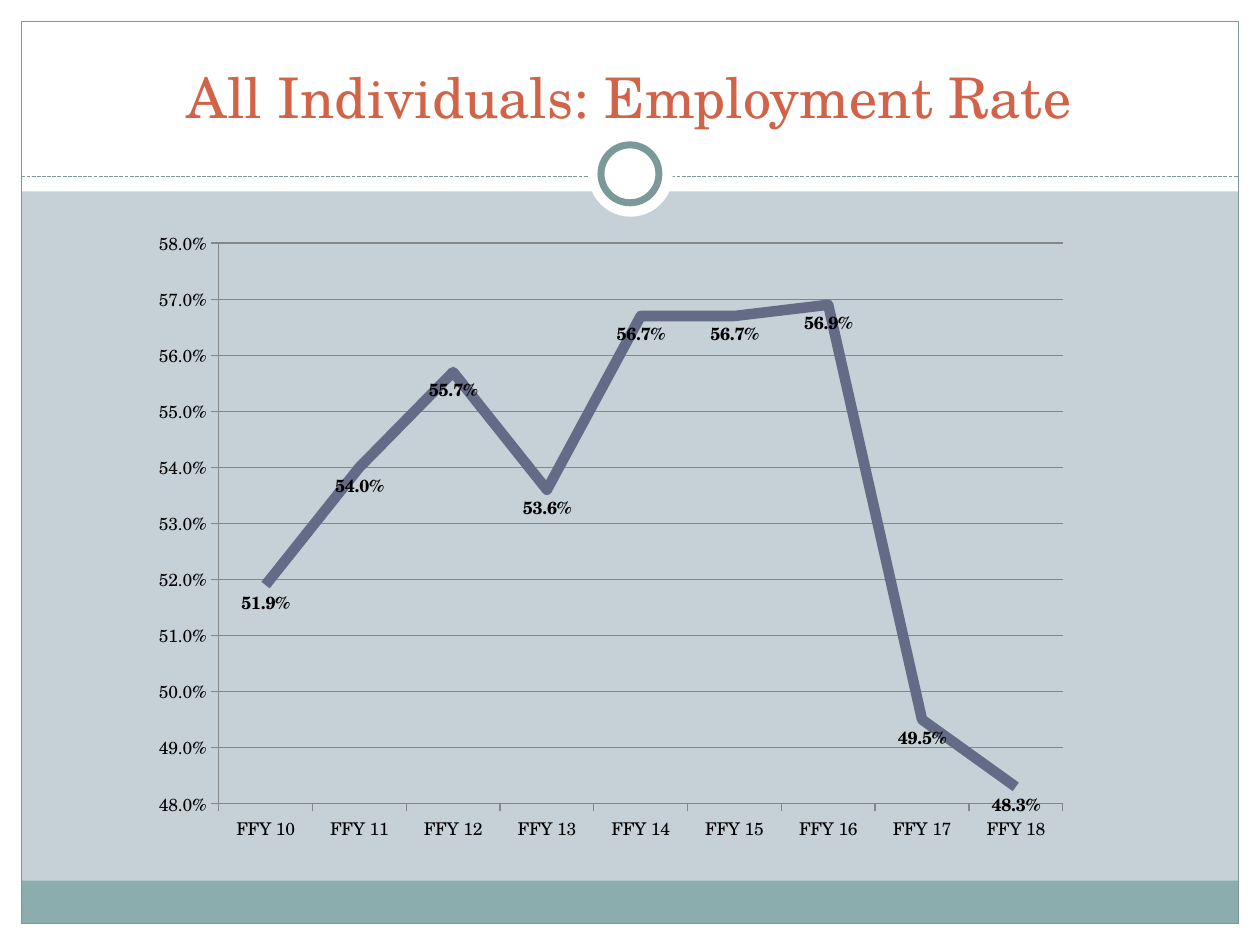
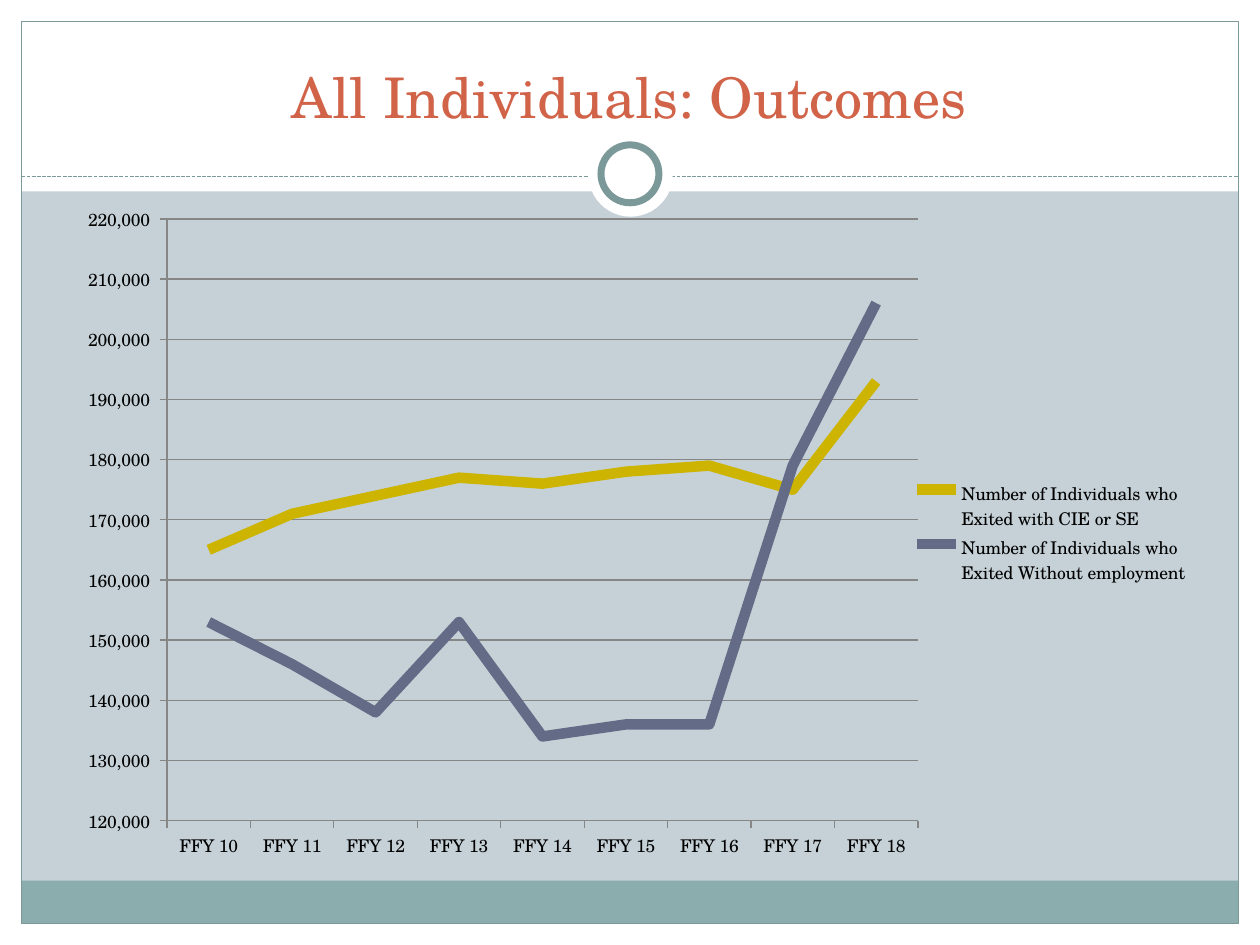
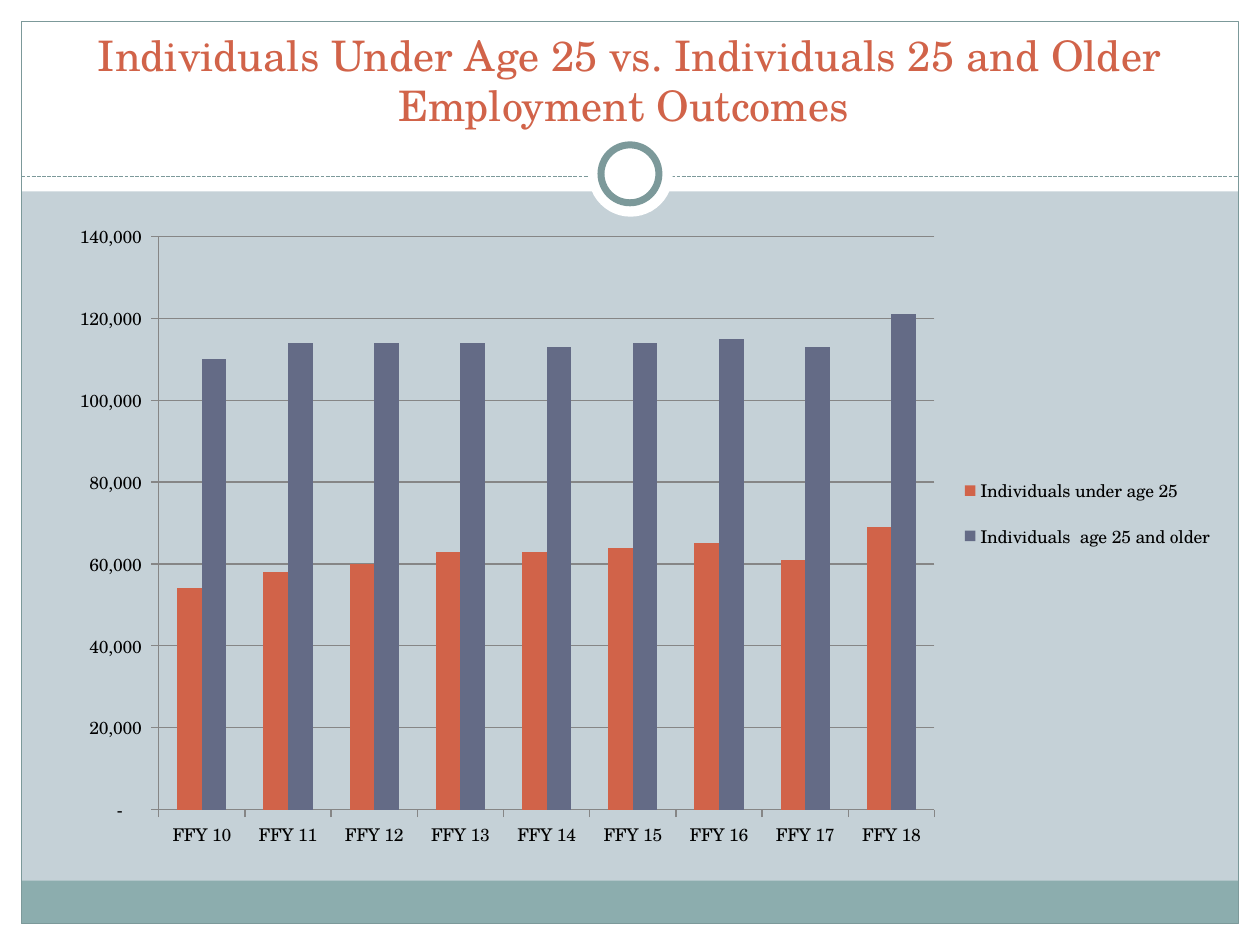
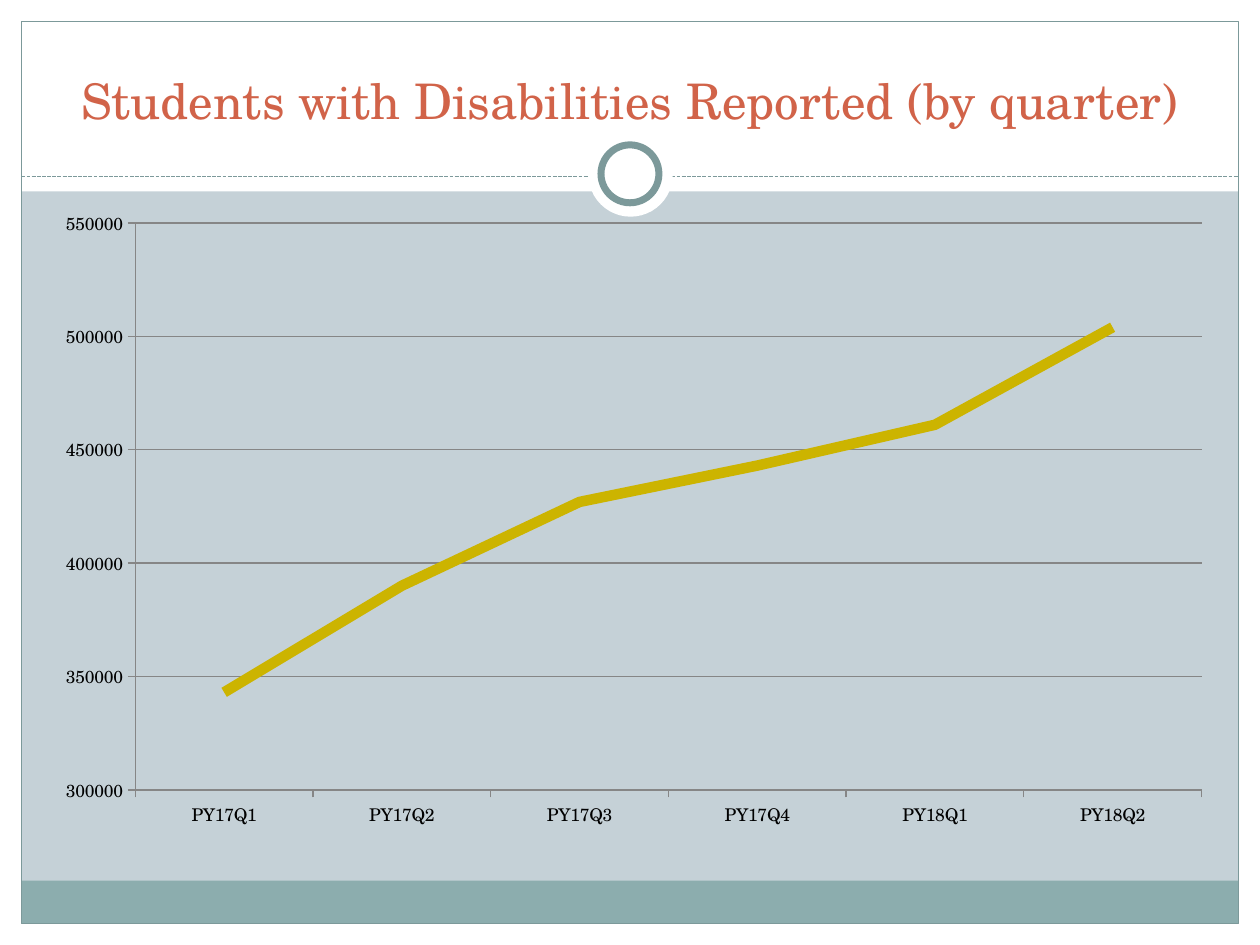
from lxml.etree import SubElement
from pptx import Presentation
from pptx.chart.data import CategoryChartData
from pptx.dml.color import RGBColor
from pptx.enum.chart import (XL_CHART_TYPE, XL_LABEL_POSITION,
                             XL_LEGEND_POSITION, XL_TICK_MARK)
from pptx.enum.dml import MSO_LINE
from pptx.enum.shapes import MSO_CONNECTOR, MSO_SHAPE
from pptx.enum.text import MSO_ANCHOR, PP_ALIGN
from pptx.oxml import parse_xml
from pptx.oxml.ns import nsdecls, qn
from pptx.util import Inches, Pt

FONT = "TeX Gyre Schola"
BLACK = RGBColor(0x00, 0x00, 0x00)
WHITE = RGBColor(0xFF, 0xFF, 0xFF)
MIST = RGBColor(0xC5, 0xD1, 0xD7)
TEAL = RGBColor(0x8C, 0xAD, 0xAE)
EDGE = RGBColor(0x7C, 0x99, 0x9A)
GRID = RGBColor(0x86, 0x86, 0x86)
RUST = RGBColor(0xD1, 0x63, 0x49)
GOLD = RGBColor(0xCC, 0xB4, 0x00)
SLATE = RGBColor(0x64, 0x6B, 0x86)

# Content: rates are in tenths of a percent, counts in thousands
YEARS = [f"FFY {year}" for year in range(10, 19)]
COUNT = r'_(* #,##0_);_(* \(#,##0\);_(* "-"??_);_('
LINE = XL_CHART_TYPE.LINE
BARS = XL_CHART_TYPE.COLUMN_CLUSTERED

SLIDES = [
    dict(title="All Individuals: Employment Rate", size=32, kind=LINE,
         box=(1, 1.83, 8.17, 5), plot=(0.09, 0.02, 0.82, 0.89),
         cats=YEARS, axis=(0.48, 0.58, 0.01), form="0.0%", unit=1 / 1000,
         labels=True,
         series=[("Series 1", SLATE,
                  [519, 540, 557, 536, 567, 567, 569, 495, 483])]),
    dict(title="All Individuals: Outcomes", size=32, kind=LINE,
         box=(0.5, 1.58, 9.17, 5.25), plot=(0.09, 0.03, 0.65, 0.91),
         cats=YEARS, axis=(120000, 220000, 10000), form=COUNT, unit=1000,
         legend=(0.73, 0.42, 0.25, 0.17),
         series=[("Number of Individuals who Exited with CIE or SE", GOLD,
                  [165, 171, 174, 177, 176, 178, 179, 175, 193]),
                 ("Number of Individuals who Exited Without employment", SLATE,
                  [153, 146, 138, 153, 134, 136, 136, 179, 206])]),
    dict(title="Individuals Under Age 25 vs. Individuals 25 and Older\v"
               "Employment Outcomes ", size=24, kind=BARS,
         box=(0.42, 1.67, 9.33, 5.17), plot=(0.09, 0.04, 0.66, 0.88),
         cats=YEARS, axis=(0, 140000, 20000), form=COUNT, unit=1000,
         legend=(0.77, 0.38, 0.22, 0.17),
         series=[("Individuals under age 25", RUST,
                  [54, 58, 60, 63, 63, 64, 65, 61, 69]),
                 ("Individuals  age 25 and older", SLATE,
                  [110, 114, 114, 114, 113, 114, 115, 113, 121])]),
    dict(title="Students with Disabilities Reported (by quarter)", size=28,
         kind=LINE, box=(0.33, 1.67, 9.3, 5), plot=(0.08, 0.02, 0.91, 0.9),
         cats=["PY17Q1", "PY17Q2", "PY17Q3", "PY17Q4", "PY18Q1", "PY18Q2"],
         axis=(300000, 550000, 50000), form="General", unit=1000,
         series=[("Series 1", GOLD, [343, 390, 427, 443, 461, 504])]),
]

# Frame shared by all slides: shape, box, fill, line colour, line width
RECT, OVAL = MSO_SHAPE.RECTANGLE, MSO_SHAPE.OVAL
BANDS = [
    (RECT, (0, 7.33, 10, 0.17), WHITE, None, 0),
    (RECT, (0, 0, 10, 1.52), WHITE, None, 0),
    (RECT, (0, 0, 0.17, 7.5), WHITE, None, 0),
    (RECT, (9.83, 0, 0.17, 7.5), WHITE, None, 0),
    (RECT, (0.17, 6.99, 9.66, 0.34), TEAL, None, 0),
    (RECT, (0.17, 0.17, 9.66, 7.16), None, EDGE, 0.75),
]
RING = [
    (OVAL, (4.67, 1.05, 0.67, 0.67), WHITE, None, 0),
    (OVAL, (4.77, 1.15, 0.46, 0.46), WHITE, EDGE, 4),
]


def inch(box):
    return [Inches(n) for n in box]


def stroke(line, color, width):
    line.color.rgb = color
    line.width = Pt(width)


def add_parts(slide, parts):
    for kind, box, fill, edge, width in parts:
        shape = slide.shapes.add_shape(kind, *inch(box))
        shape.shadow.inherit = False
        if fill is None:
            shape.fill.background()
        else:
            shape.fill.solid()
            shape.fill.fore_color.rgb = fill
        if edge is None:
            shape.line.fill.background()
        else:
            stroke(shape.line, edge, width)


def add_frame(slide):
    add_parts(slide, BANDS)
    rule = slide.shapes.add_connector(
        MSO_CONNECTOR.STRAIGHT, *inch((0.17, 1.4, 9.83, 1.4)))
    stroke(rule.line, EDGE, 0.75)
    rule.line.dash_style = MSO_LINE.SQUARE_DOT
    SubElement(rule._element.spPr, qn("a:effectLst"))
    add_parts(slide, RING)


def add_title(slide, text, size):
    frame = slide.shapes.add_textbox(*inch((0.33, 0.25, 9.33, 0.83))).text_frame
    frame.word_wrap = True
    frame.vertical_anchor = MSO_ANCHOR.BOTTOM
    para = frame.paragraphs[0]
    para.text = text
    para.alignment = PP_ALIGN.CENTER
    para.font.name, para.font.size = FONT, Pt(size)
    para.font.color.rgb = RUST


def set_font(font):
    font.name, font.size = FONT, Pt(10)
    font.color.rgb = BLACK


def layout(box, inner=False):
    """Manual layout in fractions of the chart area."""
    rows = [("layoutTarget", "inner")] if inner else []
    rows += [("xMode", "edge"), ("yMode", "edge"), *zip("xywh", box)]
    body = "".join(f'<c:{tag} val="{val}"/>' for tag, val in rows)
    return parse_xml(f'<c:layout {nsdecls("c")}><c:manualLayout>{body}'
                     '</c:manualLayout></c:layout>')


def add_axes(chart, limits, form):
    cat, val = chart.category_axis, chart.value_axis
    for axis in (cat, val):
        axis.major_tick_mark = XL_TICK_MARK.OUTSIDE
        axis.minor_tick_mark = XL_TICK_MARK.NONE
        stroke(axis.format.line, GRID, 0.75)
        set_font(axis.tick_labels.font)
    cat.has_major_gridlines = False
    val.has_major_gridlines = True
    stroke(val.major_gridlines.format.line, GRID, 0.75)
    val.minimum_scale, val.maximum_scale, val.major_unit = limits
    val.tick_labels.number_format = form
    val.tick_labels.number_format_is_linked = False


def add_labels(series, form):
    labels = series.data_labels
    labels.show_value = True
    labels.position = XL_LABEL_POSITION.BELOW
    labels.number_format = form
    labels.number_format_is_linked = False
    set_font(labels.font)
    labels.font.bold = True


def add_graph(slide, item):
    data = CategoryChartData(number_format=item["form"])
    data.categories = item["cats"]
    for name, _, vals in item["series"]:
        data.add_series(name, [round(v * item["unit"], 3) for v in vals])
    chart = slide.shapes.add_chart(item["kind"], *inch(item["box"]), data).chart
    chart.has_title = False
    set_font(chart.font)
    add_axes(chart, item["axis"], item["form"])

    # Series colours
    plot = chart.plots[0]
    plot.vary_by_categories = False
    for series, (_, color, _) in zip(plot.series, item["series"]):
        if item["kind"] == LINE:
            series.smooth = False
            stroke(series.format.line, color, 6)
        else:
            series.format.fill.solid()
            series.format.fill.fore_color.rgb = color
        if item.get("labels"):
            add_labels(series, item["form"])
    if item["kind"] == BARS:
        plot.gap_width, plot.overlap = 150, 0

    # Plot and legend places
    area = chart._chartSpace.chart.plotArea
    for old in area.findall(qn("c:layout")):
        area.remove(old)
    area.insert(0, layout(item["plot"], inner=True))
    chart.has_legend = "legend" in item
    if chart.has_legend:
        legend = chart.legend
        legend.position = XL_LEGEND_POSITION.RIGHT
        legend.include_in_layout = False
        set_font(legend.font)
        node = legend._element
        for old in node.findall(qn("c:layout")):
            node.remove(old)
        node.find(qn("c:legendPos")).addnext(layout(item["legend"]))


def main():
    prs = Presentation()
    prs.slide_width, prs.slide_height = Inches(10), Inches(7.5)
    back = prs.slide_master.background.fill
    back.solid()
    back.fore_color.rgb = MIST
    for item in SLIDES:
        slide = prs.slides.add_slide(prs.slide_layouts[6])
        add_frame(slide)
        add_title(slide, item["title"], item["size"])
        add_graph(slide, item)
    prs.save("out.pptx")


if __name__ == "__main__":
    main()
